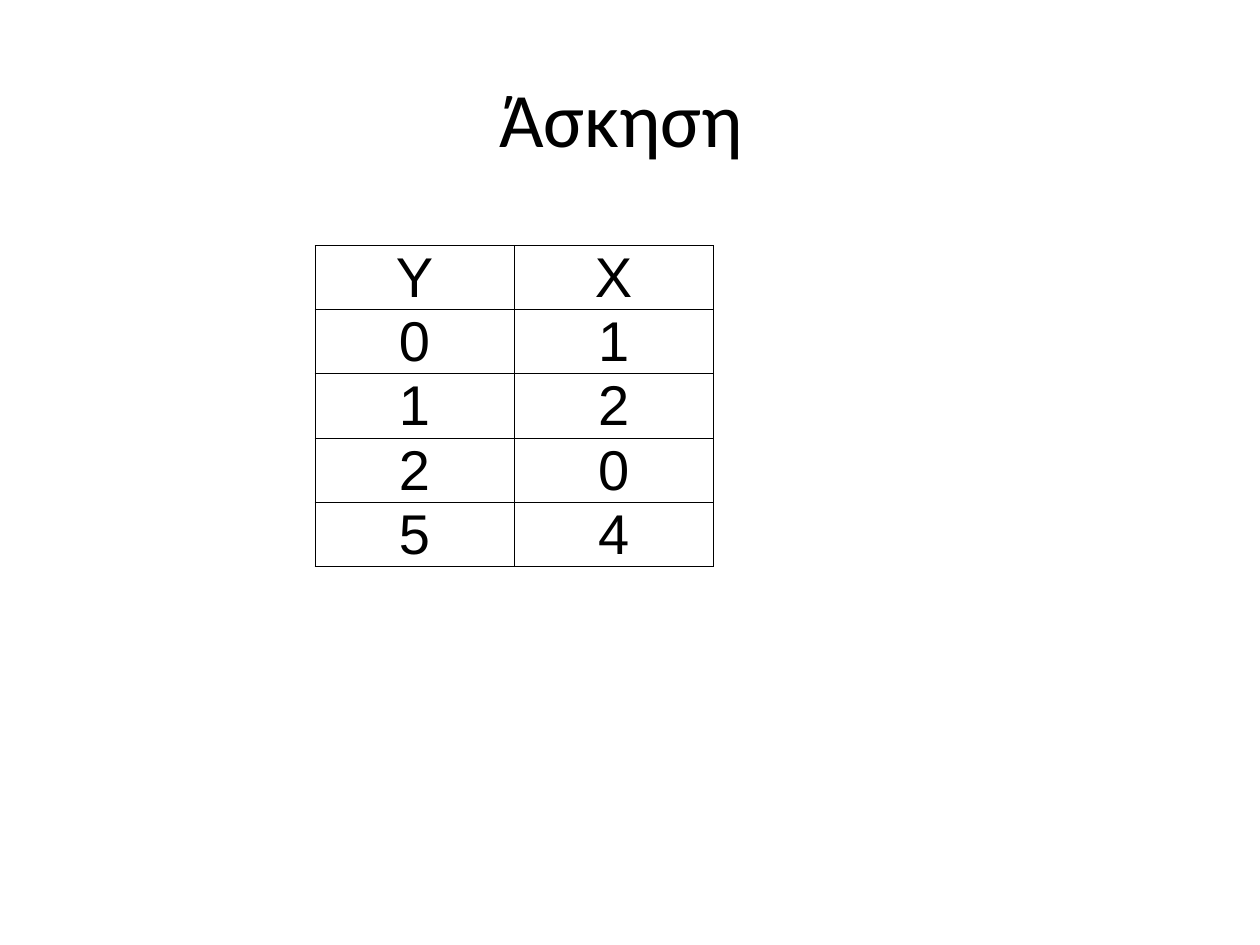
import pptx
import pptx.util
import pptx.dml.color
import pptx.enum.text
import pptx.oxml
import pptx.oxml.ns
from pptx.util import Inches

TITLE = "Άσκηση "
ROWS = [("Y", "X"), ("0", "1"), ("1", "2"), ("2", "0"), ("5", "4")]
BLACK = pptx.dml.color.RGBColor(0, 0, 0)
COLUMN_WIDTH = 1.58
ROW_HEIGHT = 0.5
BORDER_POINTS = 0.5


def add_text(text_frame, text, font_name, size):
    paragraph = text_frame.paragraphs[0]
    paragraph.alignment = pptx.enum.text.PP_ALIGN.CENTER
    run = paragraph.add_run()
    run.text = text
    run.font.name = font_name
    run.font.size = pptx.util.Pt(size)
    run.font.color.rgb = BLACK


def add_borders(cell):
    properties = cell._tc.get_or_add_tcPr()
    namespace = pptx.oxml.ns.nsdecls("a")
    width = pptx.util.Pt(BORDER_POINTS)
    for position, side in enumerate(("lnL", "lnR", "lnT", "lnB")):
        border = pptx.oxml.parse_xml(
            f'<a:{side} {namespace} w="{width}"><a:solidFill>'
            f'<a:srgbClr val="{BLACK}"/></a:solidFill></a:{side}>'
        )
        properties.insert(position, border)


def add_title(slide):
    title = slide.shapes.title
    title.left, title.top = Inches(0.5), Inches(0.3)
    title.width, title.height = Inches(9), Inches(1.25)
    title.text_frame.vertical_anchor = pptx.enum.text.MSO_ANCHOR.MIDDLE
    add_text(title.text_frame, TITLE, "Calibri", 44)


def add_value_table(slide):
    column_count = len(ROWS[0])
    table = slide.shapes.add_table(
        len(ROWS), column_count, Inches(2.5), Inches(1.95),
        Inches(COLUMN_WIDTH * column_count), Inches(ROW_HEIGHT * len(ROWS)),
    ).table
    table.first_row = False
    table.horz_banding = False
    for column in table.columns:
        column.width = Inches(COLUMN_WIDTH)
    for row, values in zip(table.rows, ROWS):
        row.height = Inches(ROW_HEIGHT)
        for cell, value in zip(row.cells, values):
            cell.fill.background()
            cell.vertical_anchor = pptx.enum.text.MSO_ANCHOR.BOTTOM
            cell.margin_left = cell.margin_right = cell.margin_top = Inches(0.01)
            cell.margin_bottom = 0
            add_text(cell.text_frame, value, "Arial", 32)
            add_borders(cell)


def main():
    presentation = pptx.Presentation()
    presentation.slide_width = Inches(10)
    presentation.slide_height = Inches(7.5)
    slide = presentation.slides.add_slide(presentation.slide_layouts[5])
    add_title(slide)
    add_value_table(slide)
    presentation.save("out.pptx")


if __name__ == "__main__":
    main()
